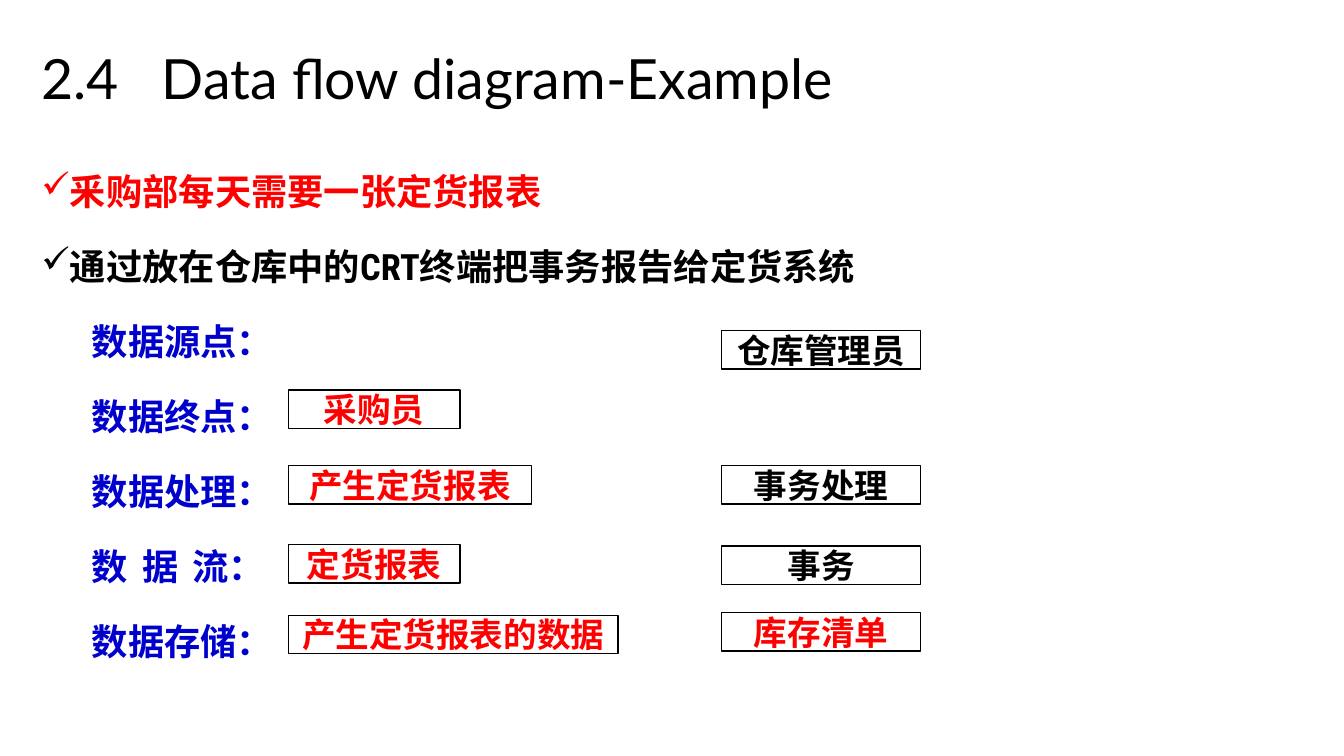
from dataclasses import dataclass

from lxml.etree import SubElement as Sub
from pptx import Presentation
from pptx.dml.color import RGBColor as RGB
from pptx.enum.shapes import MSO_SHAPE as Shape
from pptx.enum.text import MSO_ANCHOR as Anchor, MSO_AUTO_SIZE as Auto, PP_ALIGN as Align
from pptx.oxml.ns import qn
from pptx.util import Pt


@dataclass(frozen=True)
class Theme:
    black: RGB = RGB(0, 0, 0)
    red: RGB = RGB(255, 0, 0)
    blue: RGB = RGB(0, 0, 0xCC)
    head_font: str = "Lato"
    body_font: str = "Roboto Condensed"
    box_font: str = "Calibri"
    head_size: float = 39.6
    body_size: float = 25.9
    box_size: float = 24


def set_tabs(para, stops):
    tabs = Sub(para._p.get_or_add_pPr(), qn("a:tabLst"))
    for stop in stops:
        Sub(tabs, qn("a:tab"), pos=str(Pt(stop)), algn="l")


class Page:
    def __init__(self, deck, theme):
        self.theme = theme
        self.slide = deck.slides.add_slide(deck.slide_layouts[5])

    def style(self, para, font, size, color, bold=True):
        for run in para.runs:
            run.font.name = font
            run.font.size = Pt(size)
            run.font.bold = bold
            run.font.color.rgb = color

    def title(self, text, left, top, width, height, stops):
        head = self.slide.shapes.title
        head.left, head.top = Pt(left), Pt(top)
        head.width, head.height = Pt(width), Pt(height)
        frame = head.text_frame
        frame.text = text
        frame.auto_size = Auto.NONE
        frame.vertical_anchor = Anchor.MIDDLE
        para = frame.paragraphs[0]
        para.alignment = Align.LEFT
        para.line_spacing = 0.9
        set_tabs(para, stops)
        self.style(para, self.theme.head_font, self.theme.head_size,
                   self.theme.black, bold=False)

    def body(self, lines, left, top, width, height):
        """Fill a text box from (text, color, has check mark, tab stops) rows."""
        area = self.slide.shapes.add_textbox(Pt(left), Pt(top), Pt(width), Pt(height))
        frame = area.text_frame
        frame.word_wrap = True
        frame.text = "\n".join(line[0] for line in lines)
        for i, (para, line) in enumerate(zip(frame.paragraphs, lines)):
            _, color, check, stops = line
            para.line_spacing = 1.4
            para.space_before = Pt(10 if i else 0)
            props = para._p.get_or_add_pPr()
            props.set("marL", str(Pt(18 if check else 0)))
            props.set("indent", str(Pt(-18 if check else 36)))
            if check:
                Sub(props, qn("a:buChar"), char="✓")
            if stops:
                set_tabs(para, stops)
            self.style(para, self.theme.body_font, self.theme.body_size, color)

    def box(self, text, color, left, top, width, height=27.5):
        rect = self.slide.shapes.add_shape(
            Shape.RECTANGLE, Pt(left), Pt(top), Pt(width), Pt(height))
        rect.shadow.inherit = False
        rect.fill.background()
        rect.line.color.rgb = self.theme.black
        rect.line.width = Pt(1)
        frame = rect.text_frame
        frame.text = text
        frame.vertical_anchor = Anchor.MIDDLE
        para = frame.paragraphs[0]
        para.alignment = Align.CENTER
        self.style(para, self.theme.box_font, self.theme.box_size, color)


def main():
    deck = Presentation()
    deck.slide_width, deck.slide_height = Pt(960), Pt(540)
    theme = Theme()
    page = Page(deck, theme)
    black, red, blue = theme.black, theme.red, theme.blue

    page.title("2.4\tData flow diagram-Example", 22.5, 31, 713.5, 54, [86])
    page.body([
        ("釆购部每天需要一张定货报表", red, True, []),
        ("通过放在仓库中的CRT终端把事务报告给定货系统", black, True, []),
        ("数据源点：", blue, False, []),
        ("数据终点：", blue, False, []),
        ("数据处理：", blue, False, []),
        ("数\t据\t流：", blue, False, [79, 117]),
        ("数据存储：", blue, False, []),
    ], 22.5, 105, 916.5, 381)

    for text, top, width in [
        ("采购员", 278.5, 122.5),
        ("产生定货报表", 332.5, 173.5),
        ("定货报表", 389, 122.5),
        ("产生定货报表的数据", 439.5, 235.5),
    ]:
        page.box(text, red, 206, top, width)
    for text, color, top in [
        ("仓库管理员", black, 236),
        ("事务处理", black, 332.5),
        ("事务", black, 390),
        ("库存清单", red, 437.5),
    ]:
        page.box(text, color, 515.5, top, 142)

    deck.save("out.pptx")


if __name__ == "__main__":
    main()
